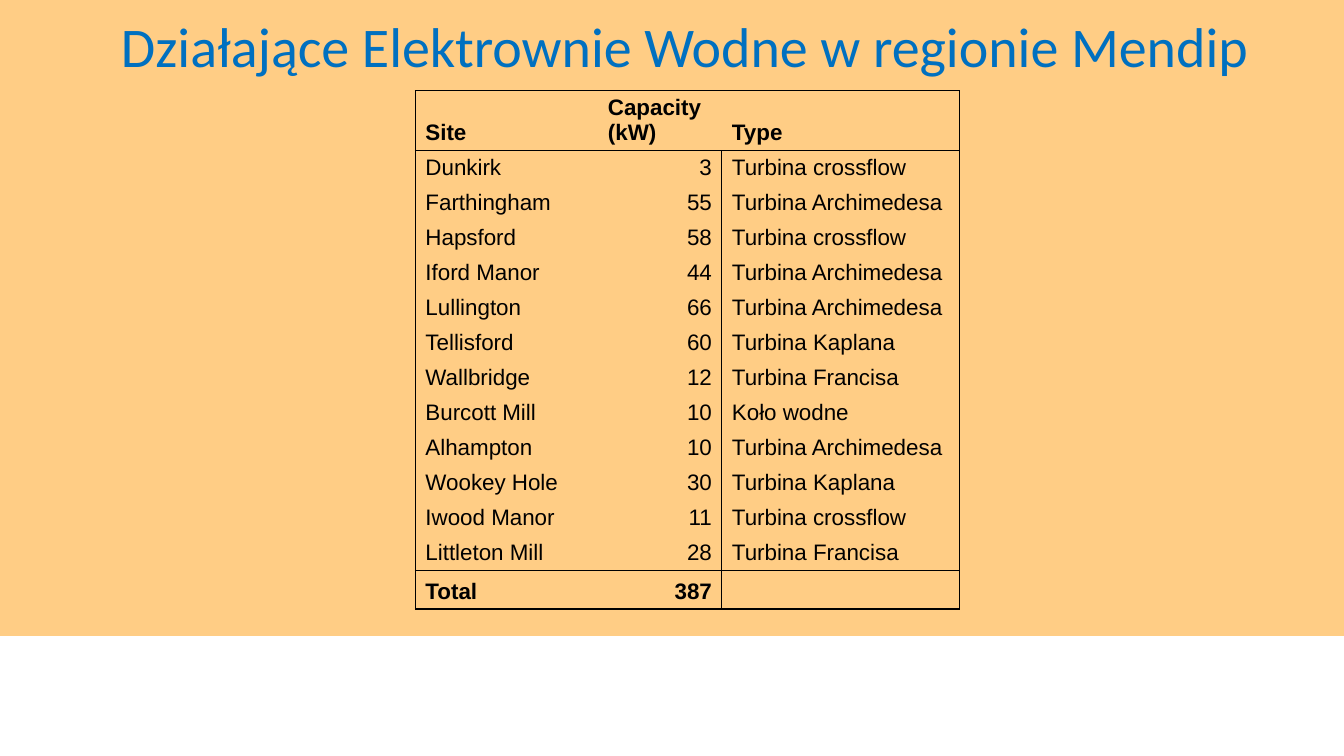
from lxml import etree
from pptx import Presentation
from pptx import util as u
from pptx.dml.color import RGBColor
from pptx.enum import shapes, text
from pptx.oxml import ns

BLACK = RGBColor(0x00, 0x00, 0x00)
BLUE = RGBColor(0x00, 0x70, 0xC0)
ORANGE = RGBColor(0xFF, 0xAA, 0x2D)

SITES = [
    ("Site", "Capacity (kW)", "Type"),
    ("Dunkirk", "3", "Turbina crossflow"),
    ("Farthingham", "55", "Turbina Archimedesa"),
    ("Hapsford", "58", "Turbina crossflow"),
    ("Iford Manor", "44", "Turbina Archimedesa"),
    ("Lullington", "66", "Turbina Archimedesa"),
    ("Tellisford", "60", "Turbina Kaplana"),
    ("Wallbridge", "12", "Turbina Francisa"),
    ("Burcott Mill", "10", "Koło wodne"),
    ("Alhampton", "10", "Turbina Archimedesa"),
    ("Wookey Hole", "30", "Turbina Kaplana"),
    ("Iwood Manor", "11", "Turbina crossflow"),
    ("Littleton Mill", "28", "Turbina Francisa"),
    ("Total", "387", ""),
]


def write(tf, words, *, font="Arial", size=16, color=BLACK, bold=False,
          align=text.PP_ALIGN.LEFT):
    p = tf.paragraphs[0]
    p.alignment = align
    r = p.add_run()
    r.text = words
    r.font.name = font
    r.font.size = u.Pt(size)
    r.font.bold = bold
    r.font.color.rgb = color


class Deck:
    """Draws styled elements on the current slide."""

    def __init__(self):
        self.prs = Presentation()
        self.prs.slide_width = u.Inches(13.33)
        self.prs.slide_height = u.Inches(7.5)
        self.s = self.prs.slides.add_slide(self.prs.slide_layouts[6])

    def panel(self, x, y, w, h, color, opacity):
        sp = self.s.shapes.add_shape(
            shapes.MSO_SHAPE.RECTANGLE, *map(u.Inches, (x, y, w, h)))
        sp.shadow.inherit = False
        sp.fill.solid()
        sp.fill.fore_color.rgb = color
        sp.line.fill.background()
        clr = sp.fill._xPr.find(".//" + ns.qn("a:srgbClr"))
        etree.SubElement(clr, ns.qn("a:alpha"), val=str(opacity * 1000))

    def title(self, words, x, y, w, h):
        sp = self.s.shapes.add_textbox(*map(u.Inches, (x, y, w, h)))
        tf = sp.text_frame
        tf.word_wrap = True
        tf.vertical_anchor = text.MSO_ANCHOR.MIDDLE
        write(tf, words, font="Calibri", size=40, color=BLUE,
              align=text.PP_ALIGN.CENTER)

    def borders(self, cell, sides):
        tcPr = cell._tc.get_or_add_tcPr()
        for side in "LRTB":
            ln = etree.SubElement(tcPr, ns.qn("a:ln" + side), w=str(u.Pt(1)))
            if side in sides:
                fill = etree.SubElement(ln, ns.qn("a:solidFill"))
                etree.SubElement(fill, ns.qn("a:srgbClr"), val=str(BLACK))
            else:
                etree.SubElement(ln, ns.qn("a:noFill"))

    def table(self, rows, x, y, widths, heights):
        frame = self.s.shapes.add_table(
            len(rows), len(widths), u.Inches(x), u.Inches(y),
            u.Inches(sum(widths)), u.Inches(sum(heights)))
        tbl = frame.table
        tbl.first_row = tbl.horz_banding = False
        for column, width in zip(tbl.columns, widths):
            column.width = u.Inches(width)
        last = len(rows) - 1
        for i, row in enumerate(rows):
            tbl.rows[i].height = u.Inches(heights[i])
            for j, words in enumerate(row):
                cell = tbl.cell(i, j)
                sides = {
                    "L": j == 0 or (j == 2 and i > 0),
                    "R": j == 2 or (j == 1 and i > 0),
                    "T": i in (0, 1, last),
                    "B": i in (0, last - 1, last),
                }
                self.borders(cell, [k for k, shown in sides.items() if shown])
                cell.fill.background()
                cell.vertical_anchor = text.MSO_ANCHOR.BOTTOM
                number = j == 1 and i > 0
                write(cell.text_frame, words, bold=i in (0, last),
                      align=text.PP_ALIGN.RIGHT if number else text.PP_ALIGN.LEFT)


def main():
    deck = Deck()
    deck.panel(0, 0, 13.33, 6.31, ORANGE, 58)
    deck.table(SITES, 4.12, 0.9, [1.81, 1.23, 2.36],
               [0.52] + [0.3] * (len(SITES) - 1))
    deck.title("Działające Elektrownie Wodne w regionie Mendip",
               1.04, -0.28, 11.5, 1.45)
    deck.prs.save("out.pptx")


if __name__ == "__main__":
    main()
